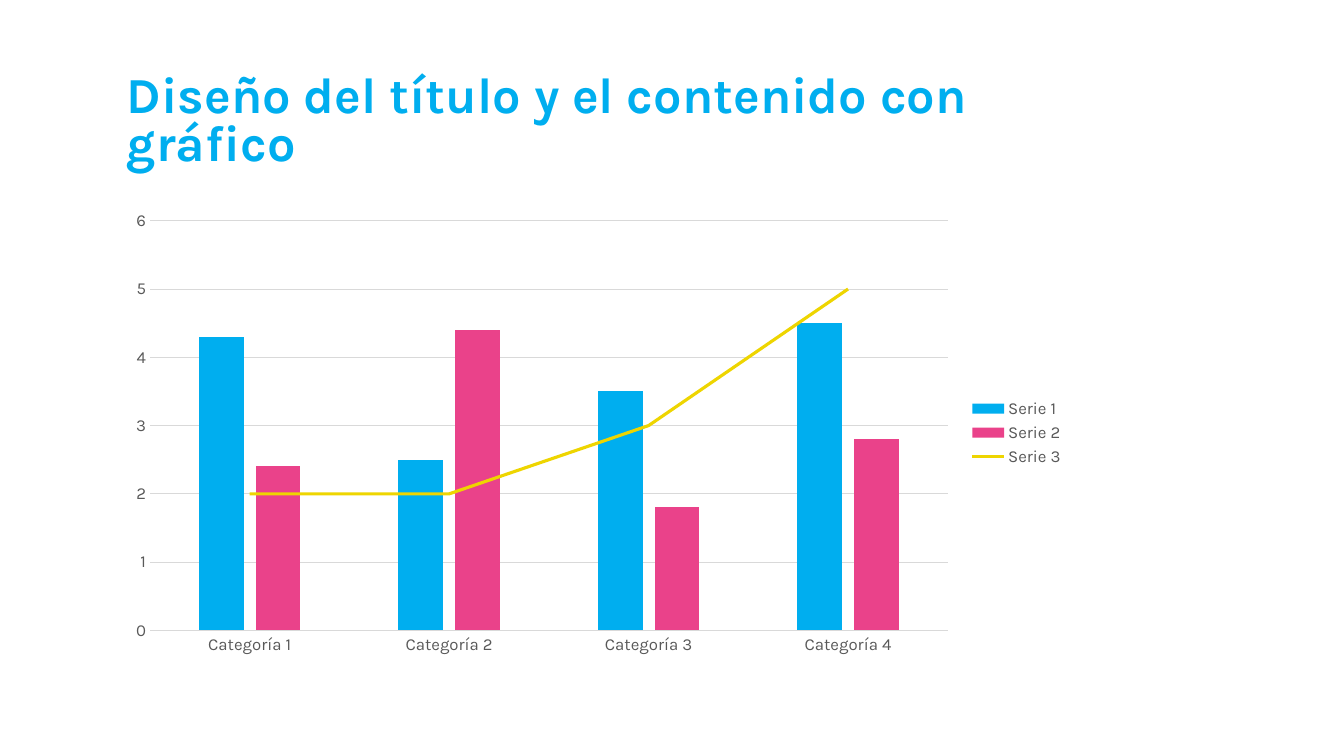
from copy import deepcopy

from pptx import Presentation
from pptx.chart.data import CategoryChartData
from pptx.dml.color import RGBColor
from pptx.enum.chart import XL_CHART_TYPE, XL_LEGEND_POSITION, XL_MARKER_STYLE, XL_TICK_MARK
from pptx.enum.text import MSO_ANCHOR
from pptx.oxml import parse_xml
from pptx.oxml.ns import nsdecls
from pptx.util import Pt

FONT = "Karla"
CYAN, PINK, YELLOW = "00AEEF", "EA428A", "EED500"
GREY, LIGHT_GREY = "595959", "D9D9D9"
LEFT, WIDTH = 83.5, 684


def color(value):
    return RGBColor.from_string(value)


def format_text(target, text=None, size=12, fill=GREY, bold=False):
    if text is not None:
        target.text = text
    target.font.name = FONT
    target.font.size = Pt(size)
    target.font.bold = bold
    target.font.color.rgb = color(fill)


presentation = Presentation()
presentation.slide_width, presentation.slide_height = Pt(960), Pt(540)
slide = presentation.slides.add_slide(presentation.slide_layouts[6])

# Title
title = slide.shapes.add_textbox(Pt(LEFT), Pt(42), Pt(WIDTH), Pt(84))
title.text_frame.word_wrap = True
title.text_frame.vertical_anchor = MSO_ANCHOR.BOTTOM
paragraph = title.text_frame.paragraphs[0]
paragraph.line_spacing = 0.8
format_text(paragraph, "Diseño del título y el contenido con gráfico", size=36, fill=CYAN, bold=True)

# Chart data
data = CategoryChartData()
data.categories = [f"Categoría {number}" for number in range(1, 5)]
data.add_series("Serie 1", (4.3, 2.5, 3.5, 4.5))
data.add_series("Serie 2", (2.4, 4.4, 1.8, 2.8))
data.add_series("Serie 3", (2, 2, 3, 5))
chart = slide.shapes.add_chart(
    XL_CHART_TYPE.COLUMN_CLUSTERED, Pt(LEFT), Pt(144), Pt(WIDTH), Pt(330), data
).chart
chart.has_title = False
format_text(chart, size=10, fill="000000")

# Move the third series to a line plot on the same axes
bar_chart = chart.element.xpath(".//c:barChart")[0]
line_chart = parse_xml(
    f'<c:lineChart {nsdecls("c")}><c:grouping val="standard"/><c:varyColors val="0"/></c:lineChart>'
)
line_series = bar_chart.xpath("./c:ser")[2]
for element in line_series.xpath("./c:invertIfNegative"):
    line_series.remove(element)
line_chart.append(line_series)
for axis_id in bar_chart.xpath("./c:axId"):
    line_chart.append(deepcopy(axis_id))
bar_chart.addnext(line_chart)

# Series formats
columns, line = chart.plots
columns.gap_width = 219
columns.overlap = -27
columns.vary_by_categories = False
for series, fill in zip(columns.series, (CYAN, PINK)):
    series.format.fill.solid()
    series.format.fill.fore_color.rgb = color(fill)
trend = line.series[0]
trend.smooth = False
trend.marker.style = XL_MARKER_STYLE.NONE
trend.format.line.color.rgb = color(YELLOW)
trend.format.line.width = Pt(2.25)

# Axes
for axis in (chart.category_axis, chart.value_axis):
    axis.major_tick_mark = axis.minor_tick_mark = XL_TICK_MARK.NONE
    format_text(axis.tick_labels)
chart.value_axis.minimum_scale = 0
chart.value_axis.maximum_scale = 6
chart.value_axis.major_unit = 1
chart.value_axis.format.line.fill.background()
for rule in (chart.category_axis.format.line, chart.value_axis.major_gridlines.format.line):
    rule.color.rgb = color(LIGHT_GREY)
    rule.width = Pt(0.75)

# Legend
chart.has_legend = True
chart.legend.position = XL_LEGEND_POSITION.RIGHT
chart.legend.include_in_layout = False
format_text(chart.legend)

presentation.save("out.pptx")
